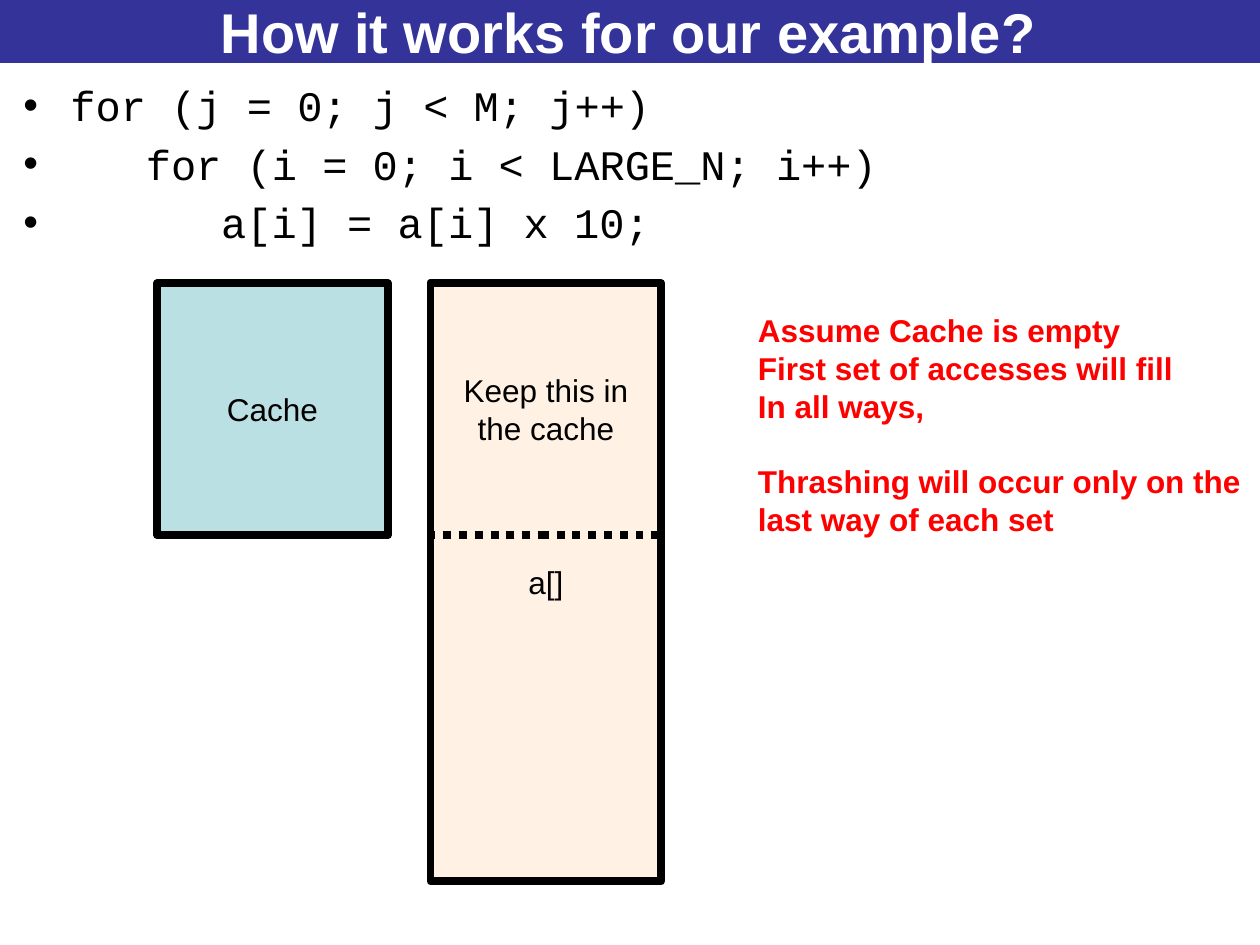
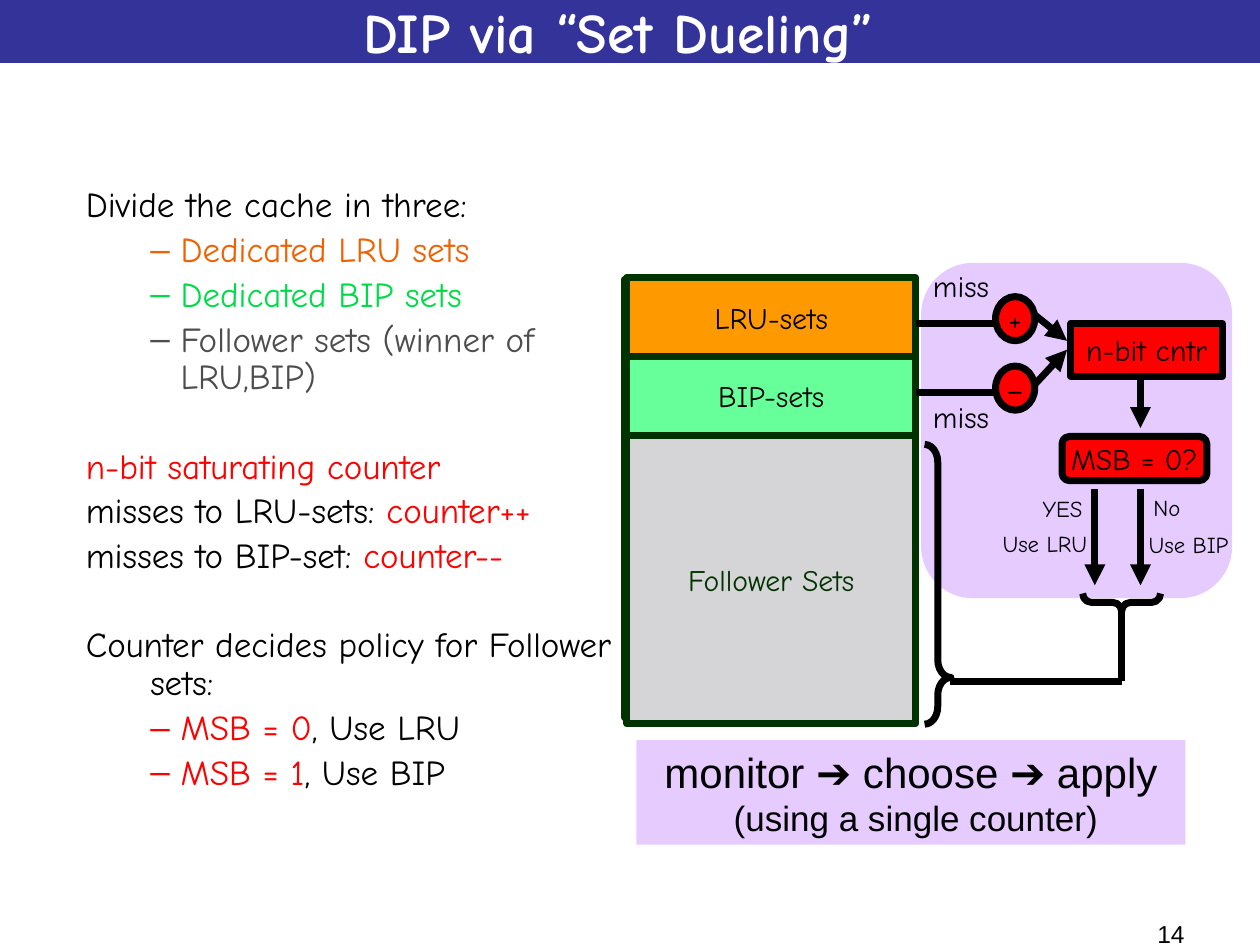
from lxml.etree import SubElement
from pptx import Presentation
from pptx.dml.color import RGBColor
from pptx.enum.dml import MSO_LINE
from pptx.enum.shapes import MSO_CONNECTOR, MSO_SHAPE
from pptx.enum.text import MSO_ANCHOR, PP_ALIGN
from pptx.oxml.ns import qn
from pptx.util import Cm, Pt

COLORS = {
    "black": "000000", "white": "FFFFFF", "navy": "333399", "red": "FF0000",
    "teal": "BBE0E3", "peach": "FFCC99", "violet": "CC99FF", "gold": "FF9900",
    "mint": "66FF99", "gray": "D5D4D6", "forest": "003300",
    "orange": "F06100", "green": "00DC49", "slate": "4D4D4D",
}
SANS, HAND, MONO = "Arial", "Comic Neue", "Courier New"
TIGHT = (0.18, 0.1, 0.18, 0.1)
WIDE = (0.25, 0.13, 0.25, 0.13)


def rgb(name):
    return RGBColor.from_string(COLORS[name])


# Shared helpers: text, shapes, lines
def style(run, size, font, color, bold=False):
    run.font.size, run.font.name, run.font.bold = Pt(size), font, bold
    run.font.color.rgb = rgb(color)


def write(shape, text, size, font=HAND, color="black", bold=False,
          align=PP_ALIGN.CENTER, anchor=MSO_ANCHOR.MIDDLE, inset=TIGHT, wrap=False):
    frame = shape.text_frame
    frame.text = text
    frame.word_wrap, frame.vertical_anchor = wrap, anchor
    (frame.margin_left, frame.margin_top,
     frame.margin_right, frame.margin_bottom) = map(Cm, inset)
    for para in frame.paragraphs:
        para.alignment = align
        for run in para.runs:
            style(run, size, font, color, bold)
    return frame


def add_box(slide, box, fill=None, line=None, width=4, kind=MSO_SHAPE.RECTANGLE, alpha=None):
    shape = slide.shapes.add_shape(kind, *map(Cm, box))
    shape.shadow.inherit = False
    if fill:
        shape.fill.solid()
        shape.fill.fore_color.rgb = rgb(fill)
        if alpha:
            tint = shape._element.spPr.find(".//" + qn("a:srgbClr"))
            SubElement(tint, qn("a:alpha")).set("val", str(alpha * 1000))
    else:
        shape.fill.background()
    if line:
        shape.line.color.rgb = rgb(line)
        shape.line.width = Pt(width)
    else:
        shape.line.fill.background()
    return shape


def add_label(slide, box, text, size, **look):
    look = {"anchor": MSO_ANCHOR.TOP, **look}
    return write(slide.shapes.add_textbox(*map(Cm, box)), text, size, **look)


def add_line(slide, start, end, arrow=False):
    line = slide.shapes.add_connector(MSO_CONNECTOR.STRAIGHT, *map(Cm, start + end))
    line.line.color.rgb = rgb("black")
    line.line.width = Pt(4)
    props = line._element.spPr
    if arrow:
        SubElement(props.find(qn("a:ln")), qn("a:tailEnd")).set("type", "triangle")
    SubElement(props, qn("a:effectLst"))


def add_brace(slide, box, curl, tip):
    brace = add_box(slide, box, line="black", kind=MSO_SHAPE.RIGHT_BRACE)
    brace.adjustments[0], brace.adjustments[1] = curl, tip
    return brace


def indent(para, left, hang, bullet=None):
    props = para._p.get_or_add_pPr()
    props.set("marL", str(Cm(left)))
    props.set("indent", str(-Cm(hang)))
    if bullet:
        SubElement(props, qn("a:buFont")).set("typeface", SANS)
        SubElement(props, qn("a:buChar")).set("char", bullet)


def add_title(slide, text, font, inset=WIDE):
    bar = add_box(slide, (-0.05, 0, 25.45, 1.27), "navy")
    write(bar, text, 32, font, "white", True, inset=inset, wrap=True)


# Slide 1 regions
def add_code(slide, box):
    lines = ["for (j = 0; j < M; j++)", "for (i = 0; i < LARGE_N; i++)",
             "a[i] = a[i] x 10;"]
    frame = add_label(slide, box, "\n".join(lines), 24, font=MONO,
                      align=PP_ALIGN.LEFT, inset=WIDE, wrap=True)
    for depth, para in enumerate(frame.paragraphs):
        left = 0.95 + 1.52 * depth
        indent(para, left, left, "•")
        para.space_before = Pt(4.8)


def add_memory(slide, box):
    x, y, width, height = box
    part, gap = 5.08, 0.86
    wide = (width - gap) / 2
    right = x + wide + gap
    look = {"font": SANS, "inset": WIDE, "wrap": True}
    cache = add_box(slide, (x, y, wide, part), "teal", "black", 4.5)
    write(cache, "Cache", 18, **look)
    array = add_box(slide, (right, y, wide, height), "peach", "black", 4.5, alpha=25)
    write(array, "a[]", 18, **look)
    keep = add_box(slide, (right, y, wide, part), line="black", width=4.5)
    keep.line.dash_style = MSO_LINE.ROUND_DOT
    write(keep, "Keep this in the cache", 18, **look)


def add_note(slide, box):
    lines = ["Assume Cache is empty", "First set of accesses will fill", "In all ways,",
             "Thrashing will occur only on the", "last way of each set"]
    frame = add_label(slide, box, "\n".join(lines), 18, font=SANS, color="red",
                      bold=True, align=PP_ALIGN.LEFT, inset=WIDE)
    frame.paragraphs[3].space_before = Pt(21.5)


# Slide 2 regions
def add_stack(slide, box):
    x, y, width, height = box
    # Cache lines, peeking out on the left
    count = 25
    tall = (height - 0.15) / count
    for index in range(count):
        add_box(slide, (x - 0.05, y + 0.03 + index * tall, width, tall), "gray", "forest")
    # Groups of sets
    small = 1.59
    rows = [("LRU-sets", "gold", "black", small), ("BIP-sets", "mint", "black", small),
            ("Follower Sets", "gray", "forest", height - 2 * small)]
    for text, fill, color, tall in rows:
        row = add_box(slide, (x, y, width, tall), fill, "forest")
        write(row, text, 17, color=color)
        y += tall


def add_points(slide, box):
    # Each point: level, starts a new block, coloured pieces
    points = [
        (0, False, [("Divide the cache in three:", "black")]),
        (1, False, [("Dedicated LRU sets", "orange")]),
        (1, False, [("Dedicated BIP sets", "green")]),
        (1, False, [("Follower sets (winner of LRU,BIP)", "slate")]),
        (0, True, [("n-bit saturating counter", "red")]),
        (0, False, [("misses to LRU-sets: ", "black"), ("counter++", "red")]),
        (0, False, [("misses to BIP-set: ", "black"), ("counter--", "red")]),
        (0, True, [("Counter decides policy for Follower sets:", "black")]),
        (1, False, [("MSB = 0", "red"), (", Use LRU", "black")]),
        (1, False, [("MSB = 1", "red"), (", Use BIP", "black")]),
    ]
    frame = add_label(slide, box, "", 20, inset=(0, 0, 0, 0), wrap=True)
    for index, (level, fresh, parts) in enumerate(points):
        para = frame.add_paragraph() if index else frame.paragraphs[0]
        para.alignment = PP_ALIGN.LEFT
        if level:
            indent(para, 2.87, 0.61, "–")
        else:
            indent(para, 2.26, 1.3)
        para.line_spacing = 0.9
        para.space_before = Pt(29.4 if fresh else 4)
        for text, color in parts:
            run = para.add_run()
            run.text = text
            style(run, 20, HAND, color)


def add_panel(slide, box):
    x, y, width, height = box
    add_box(slide, box, "violet", kind=MSO_SHAPE.ROUNDED_RECTANGLE, alpha=51)

    def at(left, top, *size):
        return (x + left, y + top, *size)

    # Counter and the two miss inputs
    counter = add_box(slide, at(3.02, 1.22, 3.05, 1.07), "red", "black")
    write(counter, "n-bit cntr", 17)
    inputs = [("+", 1.22, 0, 1.04, 1.57), ("–", 2.62, 2.64, 2.46, 1.75)]
    for sign, mid, label, start, end in inputs:
        add_line(slide, at(-0.1, mid), at(1.88, mid))
        dot = add_box(slide, at(1.5, mid - 0.54, 0.79, 0.89), "red", "black",
                      kind=MSO_SHAPE.OVAL)
        write(dot, sign, 17)
        add_label(slide, at(0.02, label, 1.57, 0.89), "miss", 17)
        add_line(slide, at(2.28, start), at(2.94, end), True)

    # Decision and its two outcomes
    add_line(slide, at(4.42, 2.26), at(4.42, 3.33), True)
    test = add_box(slide, at(2.84, 3.5, 2.92, 0.89), "red", "black",
                   kind=MSO_SHAPE.ROUNDED_RECTANGLE)
    write(test, "MSB = 0?", 17)
    for way in (3.5, 4.42):
        add_line(slide, at(way, 4.55), at(way, 6.5), True)
    labels = [("YES", 2.23, 4.57, 1.24), ("No", 4.42, 4.55, 1.07),
              ("Use LRU", 1.34, 5.28, 2.31), ("Use BIP", 4.21, 5.29, 2.36)]
    for text, left, top, wide in labels:
        add_label(slide, at(left, top, wide, 0.74), text, 13)

    # Braces joined to the follower sets
    add_brace(slide, at(0.07, 3.66, 0.53, 5.64), 0.667, 0.833)
    add_brace(slide, at(3.86, 6.06, 0.36, 1.57), 0.5, 0.5).rotation = 90
    add_line(slide, at(0.58, 8.43), at(4.04, 8.43))
    add_line(slide, at(4.04, 7.01), at(4.04, 8.43))


def add_summary(slide, box):
    frame = write(add_box(slide, box, "violet", alpha=51),
                  "monitor ➔ choose ➔ apply\n(using a single counter)", 24, SANS,
                  anchor=MSO_ANCHOR.TOP, inset=WIDE, wrap=True)
    detail = frame.paragraphs[1]
    indent(detail, 0.2, 0)
    detail.runs[0].font.size = Pt(20)


def add_number(slide, box):
    add_label(slide, box, "14", 14, font=SANS, align=PP_ALIGN.RIGHT, inset=WIDE, wrap=True)


# Slides
def build_example(slide):
    add_title(slide, "How it works for our example?", SANS)
    add_code(slide, (0.22, 1.47, 24.97, 16.94))
    add_memory(slide, (3.17, 5.71, 10.16, 12.06))
    add_note(slide, (15.03, 6.14, 10.34, 4.88))


def build_dueling(slide):
    add_title(slide, "DIP via “Set Dueling”", HAND, (0.25, 0.13, 0.66, 0.13))
    add_number(slide, (18.21, 18.39, 5.92, 0.66))
    add_stack(slide, (12.64, 5.6, 5.82, 8.99))
    add_points(slide, (0.77, 3.78, 12.07, 13.67))
    add_panel(slide, (18.57, 5.3, 6.27, 6.76))
    add_summary(slide, (12.83, 14.92, 11.07, 2.11))


def main():
    deck = Presentation()
    deck.slide_width, deck.slide_height = Cm(25.4), Cm(19.05)
    for build in (build_example, build_dueling):
        build(deck.slides.add_slide(deck.slide_layouts[6]))
    deck.save("out.pptx")


if __name__ == "__main__":
    main()
